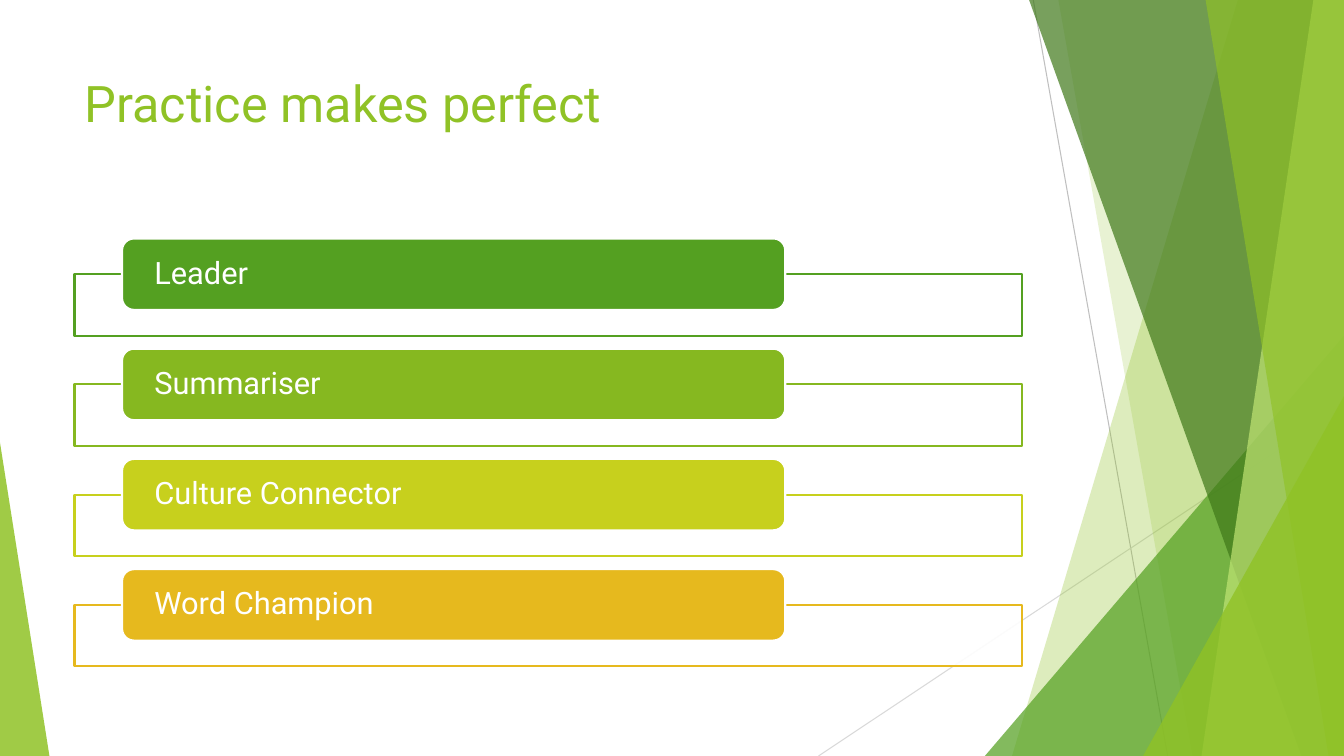
"""Build the "Practice makes perfect" slide; lengths are percentages of the slide's size."""
from dataclasses import dataclass

from lxml import etree
from pptx import Presentation
from pptx import util as u
from pptx.dml.color import RGBColor
from pptx.enum import shapes, text
from pptx.oxml.ns import qn
from pptx.shapes.autoshape import Shape
from pptx.shapes.shapetree import SlideShapes
from pptx.text.text import TextFrame

WIDTH, HEIGHT = u.Inches(13.33), u.Inches(7.5)
FONT = "Roboto"
GREEN, WHITE = "90C226", "FFFFFF"
MARGIN, CONTENT_WIDTH = 5.55, 70.5
FIRST_FRAME, ROW_PITCH = 36.27, 14.58


@dataclass
class Hairline:
    start: tuple[float, float]
    end: tuple[float, float]
    color: str


@dataclass
class Shard:
    top_left: float
    bottom_left: float
    color: str
    opacity: int


@dataclass
class Wedge:
    left: float
    top: float
    width: float
    apex: int
    color: str
    opacity: int


@dataclass
class Role:
    name: str
    color: str


HAIRLINES = [
    Hairline((76.88, 0), (86.88, 100), "BFBFBF"),
    Hairline((100, 53.73), (60.9, 100), "D9D9D9"),
]
FACETS = [
    Shard(92.1, 75.3, GREEN, 30),
    Shard(78.75, 88.72, GREEN, 20),
    Wedge(73.28, 44.4, 26.72, 1, "54A021", 72),
    Shard(76.57, 96.83, "3F7819", 70),
    Shard(97.72, 89.4, "C0E474", 70),
    Shard(89.7, 98.85, GREEN, 65),
    Wedge(85.05, 52.4, 14.95, 1, GREEN, 80),
    Wedge(0, 58.53, 3.68, 0, GREEN, 85),
]
ROLES = [
    Role("Leader", "54A021"),
    Role("Summariser", "86B820"),
    Role("Culture Connector", "C7D01D"),
    Role("Word Champion", "E6B91E"),
]


def across(share: float) -> u.Emu:
    """Turn a percentage of the slide's width into a length."""
    return u.Emu(round(WIDTH * share / 100))


def down(share: float) -> u.Emu:
    """Turn a percentage of the slide's height into a length."""
    return u.Emu(round(HEIGHT * share / 100))


def rgb(color: str) -> RGBColor:
    """Turn a hex string into a colour."""
    return RGBColor.from_string(color)


def apply(target: object, formats: dict[str, object]) -> None:
    """Set every attribute named in the format values."""
    for name, value in formats.items():
        setattr(target, name, value)


def paint(shape: Shape, fill: str, opacity: int = 100, line: str | None = None) -> None:
    """Give a shape its fill, opacity and outline, and no shadow."""
    shape.shadow.inherit = False
    shape.fill.solid()
    shape.fill.fore_color.rgb = rgb(fill)
    if opacity < 100:
        color = shape.fill._xPr.find(qn("a:solidFill"))[0]
        etree.SubElement(color, qn("a:alpha"), val=str(opacity * 1000))
    if line:
        shape.line.color.rgb = rgb(line)
        shape.line.width = u.Pt(1.5)
    else:
        shape.line.fill.background()


def write(frame: TextFrame, words: str, size: int, color: str, formats: dict[str, object]) -> None:
    """Fill a text frame with one left-aligned paragraph."""
    apply(frame, {"text": words, "word_wrap": True, "auto_size": text.MSO_AUTO_SIZE.NONE} | formats)
    paragraph = frame.paragraphs[0]
    paragraph.alignment = text.PP_ALIGN.LEFT
    font = paragraph.runs[0].font
    apply(font, {"name": FONT, "size": u.Pt(size)})
    font.color.rgb = rgb(color)


def draw_hairline(canvas: SlideShapes, hairline: Hairline) -> None:
    """Draw a thin straight line."""
    (x1, y1), (x2, y2) = hairline.start, hairline.end
    connector = canvas.add_connector(
        shapes.MSO_CONNECTOR.STRAIGHT, across(x1), down(y1), across(x2), down(y2))
    connector.line.color.rgb = rgb(hairline.color)
    connector.line.width = u.Pt(0.75)
    etree.SubElement(connector._element.spPr, qn("a:effectLst"))


def draw_facet(canvas: SlideShapes, facet: Shard | Wedge) -> None:
    """Draw a translucent shard or wedge that reaches the slide's bottom."""
    if isinstance(facet, Shard):
        builder = canvas.build_freeform(across(facet.top_left), 0)
        builder.add_line_segments(
            [(WIDTH, 0), (WIDTH, HEIGHT), (across(facet.bottom_left), HEIGHT)], close=True)
        shape = builder.convert_to_shape()
    else:
        shape = canvas.add_shape(
            shapes.MSO_SHAPE.ISOSCELES_TRIANGLE, across(facet.left), down(facet.top),
            across(facet.width), down(100 - facet.top))
        shape.adjustments[0] = facet.apex
    paint(shape, facet.color, facet.opacity)


def draw_role(canvas: SlideShapes, role: Role, top: float) -> None:
    """Draw a role's outlined frame with its named pill on the upper edge."""
    frame = canvas.add_shape(
        shapes.MSO_SHAPE.RECTANGLE, across(MARGIN), down(top), across(CONTENT_WIDTH), down(8.13))
    paint(frame, WHITE, 90, role.color)
    pill = canvas.add_shape(
        shapes.MSO_SHAPE.ROUNDED_RECTANGLE, across(9.08), down(top - 4.72), across(49.35), down(9.45))
    paint(pill, role.color, line=WHITE)
    write(pill.text_frame, role.name, 22, WHITE, {
        "vertical_anchor": text.MSO_ANCHOR.MIDDLE,
        "margin_left": across(2.15), "margin_right": across(2.15),
        "margin_top": 0, "margin_bottom": 0,
    })
    pill.text_frame.paragraphs[0].line_spacing = 0.9


def main() -> None:
    """Build and save the presentation."""
    presentation = Presentation()
    apply(presentation, {"slide_width": WIDTH, "slide_height": HEIGHT})
    slide = presentation.slides.add_slide(presentation.slide_layouts[5])
    title = slide.shapes.title
    apply(title, {"left": across(MARGIN), "top": down(8.93),
                  "width": across(CONTENT_WIDTH), "height": down(19.2)})
    write(title.text_frame, "Practice makes perfect", 36, GREEN,
          {"vertical_anchor": text.MSO_ANCHOR.TOP})
    for hairline in HAIRLINES:
        draw_hairline(slide.shapes, hairline)
    for facet in FACETS:
        draw_facet(slide.shapes, facet)
    for row, role in enumerate(ROLES):
        draw_role(slide.shapes, role, FIRST_FRAME + row * ROW_PITCH)
    presentation.save("out.pptx")


if __name__ == "__main__":
    main()
